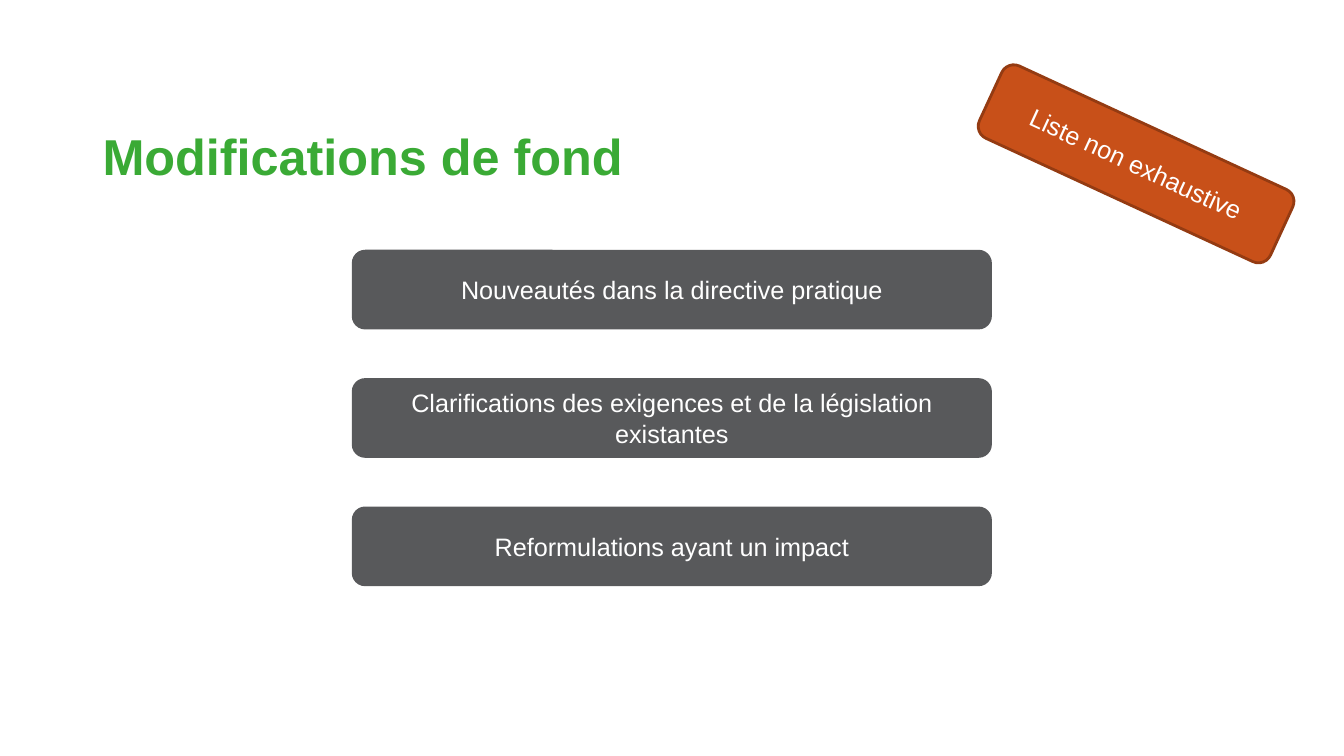
"""Build the slide listing the substantive changes."""
from dataclasses import dataclass
from typing import Optional

from pptx import Presentation
from pptx.dml.color import RGBColor
from pptx.enum.shapes import MSO_SHAPE
from pptx.enum.text import MSO_ANCHOR as ANCHOR, PP_ALIGN as ALIGN
from pptx.shapes.autoshape import Shape
from pptx.slide import Slide
from pptx.util import Pt

GREEN = RGBColor(0x3A, 0xAA, 0x35)
GREY = RGBColor(0x58, 0x59, 0x5B)
ORANGE = RGBColor(0xC8, 0x50, 0x19)
BROWN = RGBColor(0x94, 0x3B, 0x12)
WHITE = RGBColor(0xFF, 0xFF, 0xFF)

FONT = "Arial"
BOX_HEIGHT = 56.9
CHANGE_LEFT, CHANGE_TOP, CHANGE_WIDTH, CHANGE_PITCH = 251.3, 178.4, 457.2, 91.7
CHANGES = (
    "Nouveautés dans la directive pratique",
    "Clarifications des exigences et de la législation existantes",
    "Reformulations ayant un impact",
)


@dataclass(frozen=True)
class Box:
    text: str
    left: float
    top: float
    width: float
    fill: RGBColor
    line: Optional[RGBColor] = None
    rotation: float = 0


def write(sp: Shape, text: str, size: float, color: RGBColor,
          align: ALIGN, bold: bool = False) -> None:
    tf = sp.text_frame
    tf.word_wrap = True
    tf.vertical_anchor = ANCHOR.MIDDLE
    tf.text = text
    p = tf.paragraphs[0]
    p.alignment = align
    font = p.runs[0].font
    font.name, font.size, font.bold = FONT, Pt(size), bold
    font.color.rgb = color


def draw_title(s: Slide, text: str) -> None:
    sp = s.shapes.add_textbox(Pt(66.2), Pt(78.5), Pt(828), Pt(65.5))
    write(sp, text, 36, GREEN, ALIGN.LEFT, bold=True)


def draw_box(s: Slide, box: Box) -> None:
    sp = s.shapes.add_shape(MSO_SHAPE.ROUNDED_RECTANGLE, Pt(box.left), Pt(box.top),
                            Pt(box.width), Pt(BOX_HEIGHT))
    sp.rotation = box.rotation
    sp.shadow.inherit = False
    sp.fill.solid()
    sp.fill.fore_color.rgb = box.fill
    if box.line is None:
        sp.line.fill.background()
    else:
        sp.line.color.rgb = box.line
        sp.line.width = Pt(2)
    write(sp, box.text, 18, WHITE, ALIGN.CENTER)


def main() -> None:
    prs = Presentation()
    prs.slide_width, prs.slide_height = Pt(960), Pt(540)
    s = prs.slides.add_slide(prs.slide_layouts[6])
    draw_title(s, "Modifications de fond")
    for i, text in enumerate(CHANGES):
        draw_box(s, Box(text, CHANGE_LEFT, CHANGE_TOP + i * CHANGE_PITCH, CHANGE_WIDTH, GREY))
    draw_box(s, Box("Liste non exhaustive", 697, 88.6, 229, ORANGE, BROWN, 24.8))
    prs.save("out.pptx")


if __name__ == "__main__":
    main()
